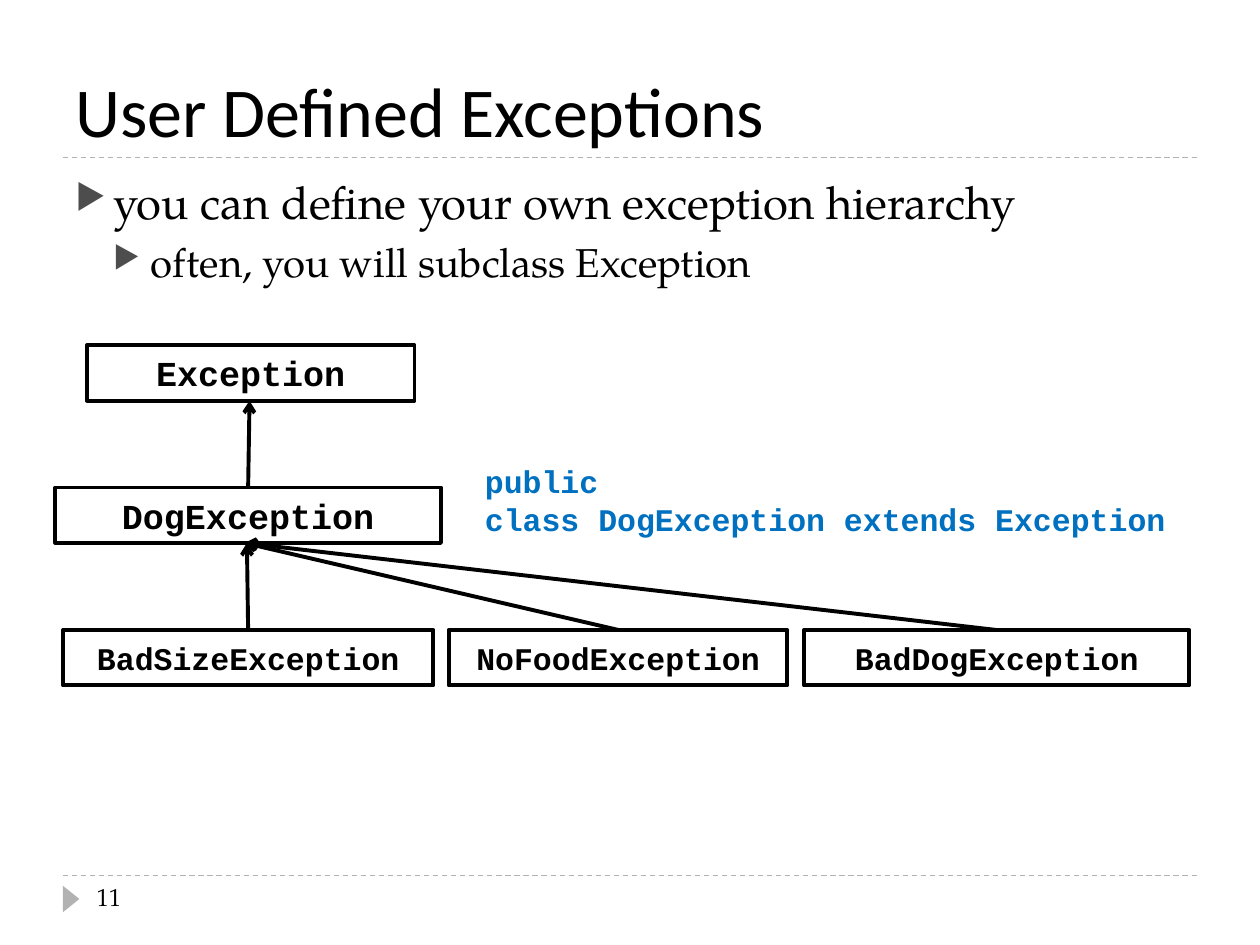
from lxml.etree import SubElement
from pptx import Presentation
from pptx.dml.color import RGBColor
from pptx.enum.dml import MSO_LINE
from pptx.enum.shapes import MSO_CONNECTOR, MSO_SHAPE
from pptx.enum.text import MSO_ANCHOR, PP_ALIGN
from pptx.oxml.ns import qn
from pptx.util import Pt

# Content
TITLE = "User Defined Exceptions"
BULLETS = [  # text, size, space before
    ("you can define your own exception hierarchy", 26, 6),
    ("often, you will subclass Exception", 23, 5),
]
CODE = ["public", "class DogException extends Exception"]
PAGE_NUMBER = "11"
BOX_HEIGHT = 31.7
CLASSES = [  # name, left, top, width, text size
    ("Exception", 49.7, 197.3, 187.2, 20),
    ("DogException", 31.7, 278.6, 220.3, 20),
    ("BadSizeException", 36, 360, 211.7, 18),
    ("NoFoodException", 256.3, 360, 193.7, 18),
    ("BadDogException", 459.4, 360, 220.3, 18),
]
ARROWS = [  # parent x, parent row bottom, child x, child row top
    (142.6, 229, 141.8, 278.6),
    (141.1, 310.3, 141.8, 360),
    (139.7, 310.3, 353.5, 360),
    (139.7, 310.3, 569.5, 360),
]
SERIF, SANS, MONO = "TeX Gyre Pagella", "Calibri", "Courier New"
BLACK, GRAY, BULLET_GRAY, BLUE = "000000", "B2B2B2", "4D4D4D", "0070C0"
INDENT = 21.6


def color(value):
    return RGBColor.from_string(value)


def write(frame, lines, font, size, ink=BLACK, bold=False, align=None):
    for index, line in enumerate(lines):
        para = frame.paragraphs[0] if index == 0 else frame.add_paragraph()
        para.text = line
        para.alignment = align
        para.font.name = font
        para.font.size = Pt(size)
        para.font.bold = bold
        para.font.color.rgb = color(ink)
    return frame.paragraphs


def add_text(left, top, width, height, *style, wrap=True, anchor=MSO_ANCHOR.TOP, **options):
    box = page.shapes.add_textbox(Pt(left), Pt(top), Pt(width), Pt(height))
    box.text_frame.word_wrap = wrap
    box.text_frame.vertical_anchor = anchor
    return write(box.text_frame, *style, **options)


def add_line(x1, y1, x2, y2, ink, width):
    line = page.shapes.add_connector(
        MSO_CONNECTOR.STRAIGHT, Pt(x1), Pt(y1), Pt(x2), Pt(y2))
    line.line.color.rgb = color(ink)
    line.line.width = Pt(width)
    SubElement(line._element.spPr, qn("a:effectLst"))
    return line


def add_bullet(para, level):
    props = para._p.get_or_add_pPr()
    props.set("marL", str(Pt(INDENT * (level + 1))))
    props.set("indent", str(-Pt(INDENT)))
    # Schema order: spacing, bullet colour, size, character, default run properties
    run_defaults = props.find(qn("a:defRPr"))
    bullet_color = SubElement(props, qn("a:buClr"))
    SubElement(bullet_color, qn("a:srgbClr"), val=BULLET_GRAY)
    SubElement(props, qn("a:buSzPct"), val="76000")
    SubElement(props, qn("a:buChar"), char="▶")
    if run_defaults is not None:
        props.append(run_defaults)


deck = Presentation()
deck.slide_width, deck.slide_height = Pt(720), Pt(540)
page = deck.slides.add_slide(deck.slide_layouts[6])

# Rules and page marker
for y in (500.4, 90):
    add_line(36, y, 684, y, GRAY, 0.75).line.dash_style = MSO_LINE.DASH
marker = page.shapes.add_shape(
    MSO_SHAPE.ISOSCELES_TRIANGLE, Pt(33.1), Pt(509), Pt(15.1), Pt(9.4))
marker.rotation = 90
marker.shadow.inherit = False
marker.fill.solid()
marker.fill.fore_color.rgb = color(GRAY)
marker.line.fill.background()

# Title, bullets and page number
add_text(36, 12.2, 648, 77.8, [TITLE], SANS, 40, anchor=MSO_ANCHOR.BOTTOM)
paras = add_text(36, 95.8, 648, 388.8, [text for text, _, _ in BULLETS], SERIF, 26)
for level, (para, (_, size, space)) in enumerate(zip(paras, BULLETS)):
    para.level = level
    para.font.size = Pt(size)
    para.space_before = Pt(space)
    add_bullet(para, level)
add_text(48.2, 500.4, 156.2, 28.8, [PAGE_NUMBER], SERIF, 14)

# Class hierarchy
for name, left, top, width, size in CLASSES:
    box = page.shapes.add_shape(
        MSO_SHAPE.RECTANGLE, Pt(left), Pt(top), Pt(width), Pt(BOX_HEIGHT))
    box.shadow.inherit = False
    box.fill.background()
    box.line.color.rgb = color(BLACK)
    box.line.width = Pt(2.25)
    box.text_frame.vertical_anchor = MSO_ANCHOR.MIDDLE
    write(box.text_frame, [name], MONO, size, bold=True, align=PP_ALIGN.CENTER)
for ends in ARROWS:
    arrow = add_line(*ends, BLACK, 2.25)
    SubElement(arrow.line._get_or_add_ln(), qn("a:headEnd"), type="arrow")

# Declaration beside the class
add_text(270, 260.6, 405.4, 51.1, CODE, MONO, 18, ink=BLUE, bold=True, wrap=False)

deck.save("out.pptx")
